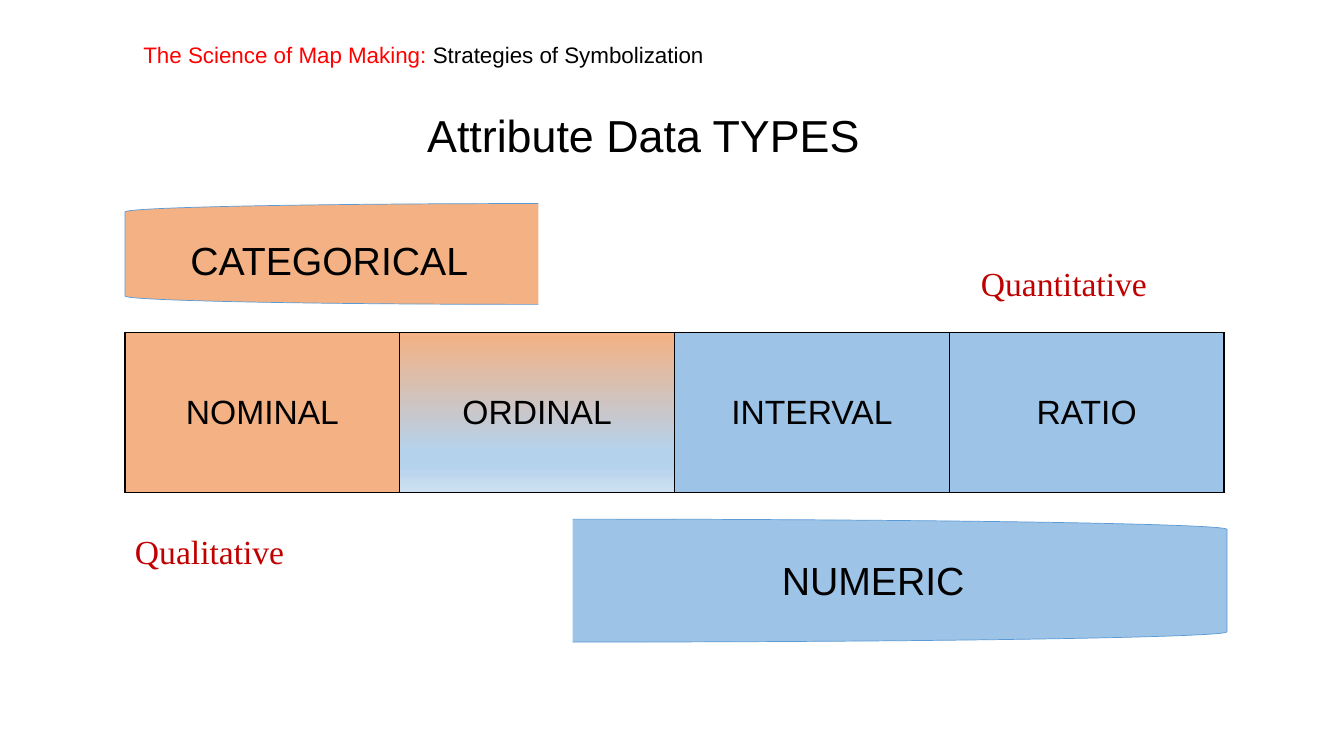
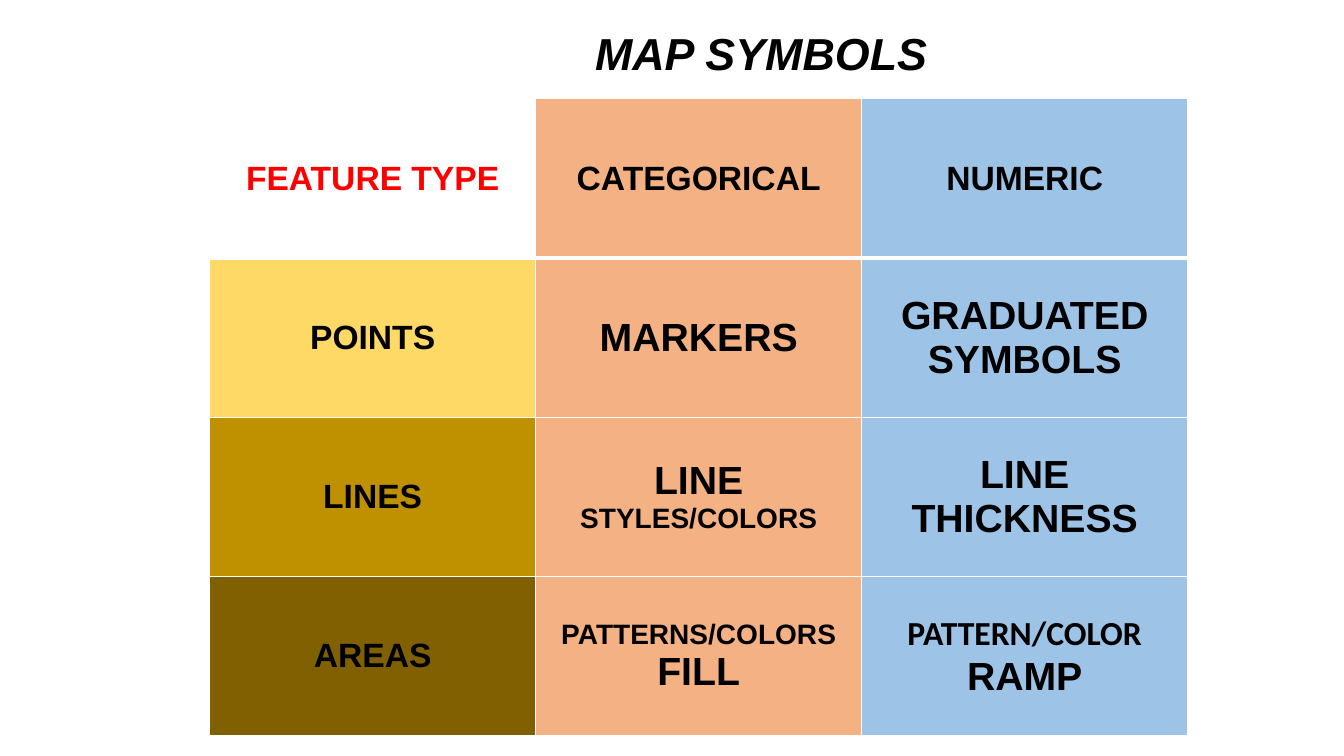
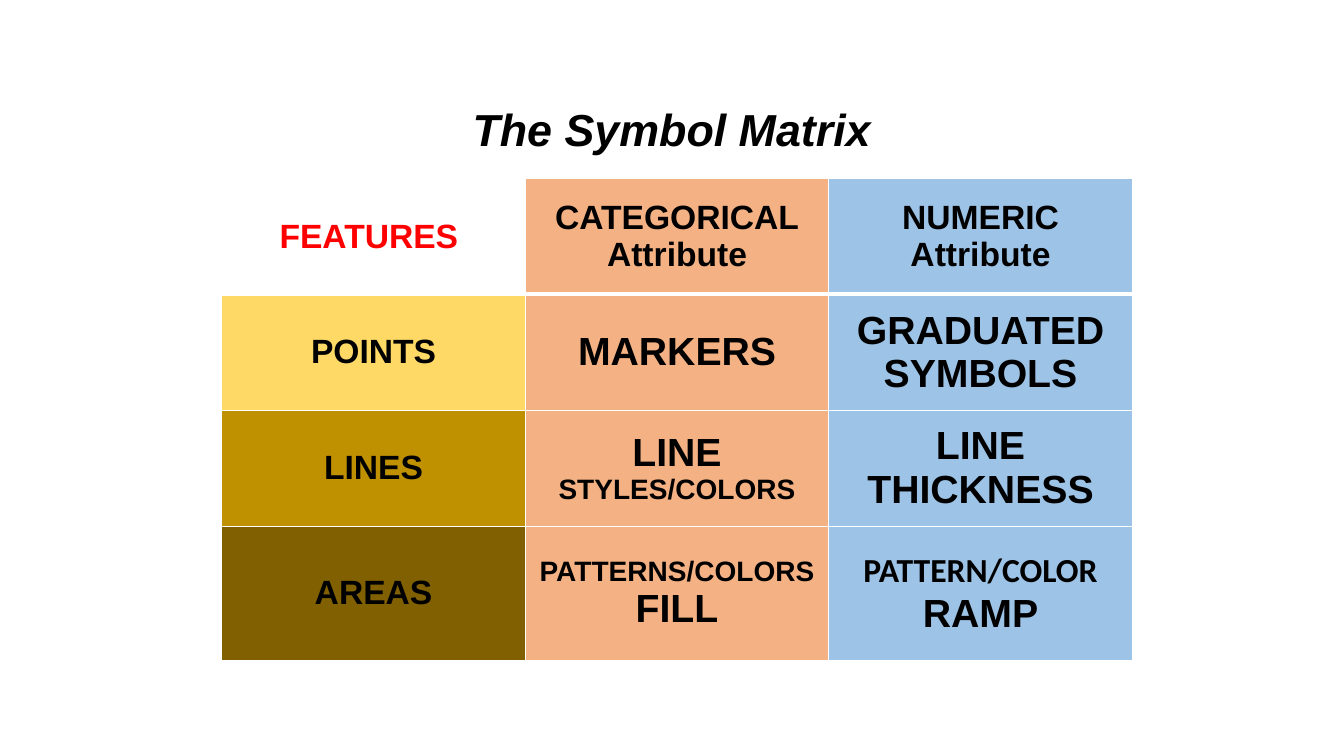
from dataclasses import dataclass

from lxml.etree import SubElement
from pptx import Presentation
from pptx.dml.color import RGBColor
from pptx.enum.shapes import MSO_SHAPE
from pptx.enum.text import MSO_ANCHOR, MSO_AUTO_SIZE, PP_ALIGN
from pptx.oxml.ns import qn
from pptx.slide import Slide
from pptx.table import Table, _Cell
from pptx.text.text import TextFrame, _Paragraph
from pptx.util import Emu, Pt

EMU_PER_PX = 9144  # 100 px to the inch


@dataclass(frozen=True)
class Theme:
    sans: str = "Arial"
    serif: str = "Times New Roman"
    condensed: str = "Calibri"
    black: str = "000000"
    white: str = "FFFFFF"
    red: str = "FF0000"
    dark_red: str = "C00000"
    outline: str = "5B9BD5"
    categorical: str = "F4B183"
    numeric: str = "9DC3E6"
    points: str = "FFD966"
    lines: str = "BF9000"
    areas: str = "806000"
    ordinal: tuple[tuple[int, str], ...] = (
        (0, "F4B183"), (74, "B5D2EC"), (83, "B5D2EC"), (100, "CEE1F2"))
    title_size: int = 32
    large: int = 28
    label: int = 24
    small: int = 20
    topic: int = 16
    thin: float = 1
    thick: float = 3
    hairline: float = 0.5


THEME = Theme()


@dataclass(frozen=True)
class Box:
    left: int
    top: int
    width: int
    height: int

    def emu(self) -> tuple[Emu, Emu, Emu, Emu]:
        return px(self.left), px(self.top), px(self.width), px(self.height)


@dataclass(frozen=True)
class Run:
    text: str
    size: int = THEME.label
    color: str = THEME.black
    font: str = THEME.sans
    bold: bool = False
    italic: bool = False


@dataclass(frozen=True)
class Label:
    box: Box
    runs: tuple[Run, ...]
    align: PP_ALIGN = PP_ALIGN.CENTER
    fill: str | None = None


@dataclass(frozen=True)
class Bracket:
    box: Box
    preset: MSO_SHAPE
    fill: str


@dataclass(frozen=True)
class Matrix:
    title: str
    title_box: Box
    grid_box: Box
    row_heights: tuple[int, ...]
    headings: tuple[tuple[Run, ...], ...]


def px(length: int) -> Emu:
    return Emu(length * EMU_PER_PX)


def rgb(color: str) -> RGBColor:
    return RGBColor.from_string(color)


# Text
def add_run(paragraph: _Paragraph, content: Run) -> None:
    run = paragraph.add_run()
    run.text = content.text
    font = run.font
    font.name, font.size = content.font, Pt(content.size)
    font.bold, font.italic = content.bold, content.italic
    font.color.rgb = rgb(content.color)


def fill_frame(frame: TextFrame, runs: tuple[Run, ...], align: PP_ALIGN) -> None:
    frame.word_wrap = True
    frame.auto_size = MSO_AUTO_SIZE.SHAPE_TO_FIT_TEXT
    frame.vertical_anchor = MSO_ANCHOR.TOP
    paragraph = frame.paragraphs[0]
    paragraph.alignment = align
    for run in runs:
        add_run(paragraph, run)


def add_title(slide: Slide, box: Box, text: str, emphasis: bool = True) -> None:
    title = slide.shapes.title
    title.left, title.top, title.width, title.height = box.emu()
    heading = Run(text, THEME.title_size, bold=emphasis, italic=emphasis)
    fill_frame(title.text_frame, (heading,), PP_ALIGN.CENTER)


def add_label(slide: Slide, label: Label) -> None:
    textbox = slide.shapes.add_textbox(*label.box.emu())
    if label.fill:
        textbox.fill.solid()
        textbox.fill.fore_color.rgb = rgb(label.fill)
    fill_frame(textbox.text_frame, label.runs, label.align)


def add_bracket(slide: Slide, bracket: Bracket) -> None:
    shape = slide.shapes.add_shape(bracket.preset, *bracket.box.emu())
    shape.shadow.inherit = False
    shape.fill.solid()
    shape.fill.fore_color.rgb = rgb(bracket.fill)
    shape.line.color.rgb = rgb(THEME.outline)
    shape.line.width = Pt(THEME.hairline)


# Tables
def add_grid(slide: Slide, box: Box, rows: int, columns: int) -> Table:
    table = slide.shapes.add_table(rows, columns, *box.emu()).table
    table.first_row = table.horz_banding = False
    return table


def set_borders(cell: _Cell, color: str, top: float = THEME.thin,
                bottom: float = THEME.thin) -> None:
    properties = cell._tc.get_or_add_tcPr()
    widths = {"L": THEME.thin, "R": THEME.thin, "T": top, "B": bottom}
    for index, (side, width) in enumerate(widths.items()):
        line = SubElement(properties, qn(f"a:ln{side}"), w=str(Pt(width)))
        solid = SubElement(line, qn("a:solidFill"))
        SubElement(solid, qn("a:srgbClr"), val=color)
        properties.insert(index, line)


def set_gradient(cell: _Cell, stops: tuple[tuple[int, str], ...]) -> None:
    cell.fill.gradient()
    cell.fill.gradient_angle = 270  # counter-clockwise: top to bottom
    stop_list = cell._tc.tcPr.find(f".//{qn('a:gsLst')}")
    for old_stop in list(stop_list):
        stop_list.remove(old_stop)
    for percent, color in stops:
        stop = SubElement(stop_list, qn("a:gs"), pos=str(percent * 1000))
        SubElement(stop, qn("a:srgbClr"), val=color)


def fill_cell(cell: _Cell, lines: tuple[Run, ...], fill: str | None) -> None:
    cell.vertical_anchor = MSO_ANCHOR.MIDDLE
    if fill:
        cell.fill.solid()
        cell.fill.fore_color.rgb = rgb(fill)
    else:
        cell.fill.background()
    frame = cell.text_frame
    for index, line in enumerate(lines):
        paragraph = frame.add_paragraph() if index else frame.paragraphs[0]
        paragraph.alignment = PP_ALIGN.CENTER
        add_run(paragraph, line)


# Content: data types
TOPIC = Label(Box(124, 36, 592, 37), (
    Run("The Science of Map Making: ", THEME.topic, THEME.red),
    Run("Strategies of Symbolization", THEME.topic)))
SCALE_BOX = Box(124, 330, 1090, 159)
SCALES = (("NOMINAL", THEME.categorical), ("ORDINAL", THEME.categorical),
          ("INTERVAL", THEME.numeric), ("RATIO", THEME.numeric))
BRACKETS = (
    Bracket(Box(124, 202, 410, 100), MSO_SHAPE.LEFT_BRACKET, THEME.categorical),
    Bracket(Box(568, 515, 649, 122), MSO_SHAPE.RIGHT_BRACKET, THEME.numeric))
TYPE_LABELS = (
    Label(Box(179, 230, 300, 57), (Run("CATEGORICAL", THEME.large),),
          PP_ALIGN.LEFT, THEME.categorical),
    Label(Box(639, 547, 454, 57), (Run("NUMERIC", THEME.large),)),
    *(Label(box, (Run(text, color=THEME.dark_red, font=THEME.serif),), PP_ALIGN.LEFT)
      for text, box in (("Qualitative", Box(124, 522, 249, 50)),
                        ("Quantitative", Box(963, 256, 254, 50)))))


# Content: symbol matrices
def strong(text: str, size: int = THEME.label, color: str = THEME.black,
           font: str = THEME.sans) -> Run:
    return Run(text, size, color, font, bold=True)


HEADING_FILLS = (None, THEME.categorical, THEME.numeric)
FEATURE_FILLS = (THEME.points, THEME.lines, THEME.areas)
SYMBOLS = (
    ((strong("POINTS"),),
     (strong("MARKERS", THEME.large),),
     (strong("GRADUATED", THEME.large), strong("SYMBOLS", THEME.large))),
    ((strong("LINES"),),
     (strong("LINE", THEME.large), strong("STYLES/COLORS", THEME.small)),
     (strong("LINE", THEME.large), strong("THICKNESS", THEME.large))),
    ((strong("AREAS"),),
     (strong("PATTERNS/COLORS", THEME.small), strong("FILL", THEME.large)),
     (strong("PATTERN/COLOR", font=THEME.condensed), strong("RAMP", THEME.large))),
)
MATRICES = (
    Matrix("MAP SYMBOLS", Box(405, 20, 700, 64), Box(208, 98, 970, 632),
           (158, 158, 158, 158),
           ((strong("FEATURE TYPE", color=THEME.red),),
            (strong("CATEGORICAL"),), (strong("NUMERIC"),))),
    Matrix("The Symbol Matrix", Box(446, 96, 441, 64), Box(220, 177, 903, 478),
           (115, 115, 115, 133),
           ((strong("FEATURES ", color=THEME.red),),
            (strong("CATEGORICAL"), strong("Attribute")),
            (strong("NUMERIC"), strong("Attribute")))),
)


# Slides
def draw_data_types(slide: Slide) -> None:
    add_title(slide, Box(207, 102, 863, 64), "Attribute Data TYPES", emphasis=False)
    add_label(slide, TOPIC)
    scales = add_grid(slide, SCALE_BOX, 1, len(SCALES))
    for column, (name, fill) in enumerate(SCALES):
        cell = scales.cell(0, column)
        fill_cell(cell, (Run(name),), fill)
        if name == "ORDINAL":
            set_gradient(cell, THEME.ordinal)
        set_borders(cell, THEME.black)
    for bracket in BRACKETS:
        add_bracket(slide, bracket)
    for label in TYPE_LABELS:
        add_label(slide, label)


def draw_matrix(slide: Slide, matrix: Matrix) -> None:
    add_title(slide, matrix.title_box, matrix.title)
    content = (matrix.headings, *SYMBOLS)
    table = add_grid(slide, matrix.grid_box, len(content), len(HEADING_FILLS))
    for row, (height, entries) in enumerate(zip(matrix.row_heights, content)):
        table.rows[row].height = px(height)
        for column, lines in enumerate(entries):
            fill = HEADING_FILLS[column]
            if row and not column:
                fill = FEATURE_FILLS[row - 1]
            cell = table.cell(row, column)
            fill_cell(cell, lines, fill)
            set_borders(cell, THEME.white,
                        top=THEME.thick if row == 1 else THEME.thin,
                        bottom=THEME.thick if row == 0 else THEME.thin)


def main() -> None:
    deck = Presentation()
    deck.slide_width, deck.slide_height = px(1333), px(750)
    title_only = deck.slide_layouts[5]
    draw_data_types(deck.slides.add_slide(title_only))
    for matrix in MATRICES:
        draw_matrix(deck.slides.add_slide(title_only), matrix)
    deck.save("out.pptx")


if __name__ == "__main__":
    main()
